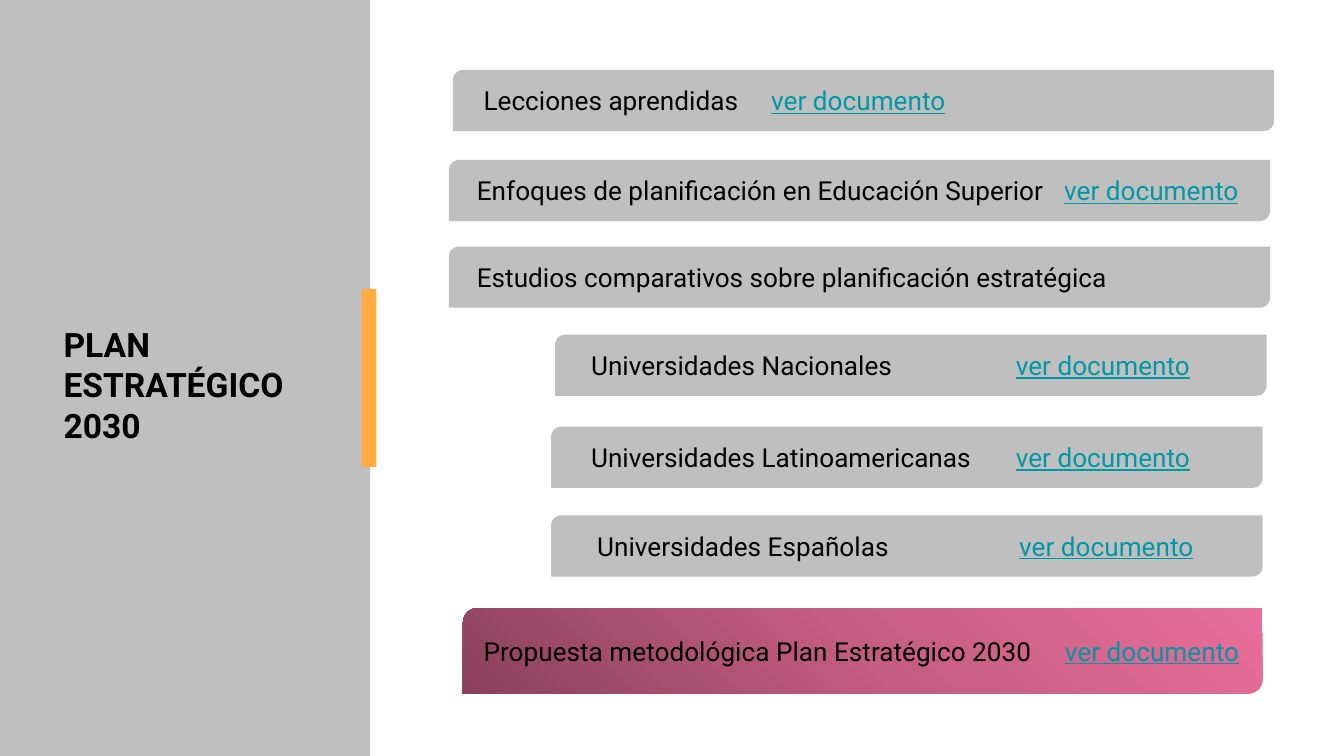
from dataclasses import dataclass

from pptx import Presentation
from pptx import util as u
from pptx.dml.color import RGBColor
from pptx.enum import shapes, text
from pptx.oxml import parse_xml
from pptx.oxml.ns import nsdecls, qn
from pptx.shapes.autoshape import Shape
from pptx.slide import Slide
from pptx.text.text import _Paragraph as Paragraph

PX_PER_INCH = 200
PAGE_WIDTH = 2000
PAGE_HEIGHT = 1125
BAR_HEIGHT = 91
LABEL_HEIGHT = 68
LABEL_DROP = 12
LINK = "ver documento"


@dataclass(frozen=True)
class Theme:
    font: str = "Roboto"
    title_size: int = 18
    label_size: int = 14
    ink: str = "000000"
    link: str = "0097A7"
    panel: str = "BFBFBF"
    accent: str = "FFAB40"
    glow: tuple[tuple[int, str], ...] = ((0, "89415B"), (50, "C45D82"), (100, "E86E9A"))


@dataclass(frozen=True)
class Box:
    left: int
    top: int
    width: int
    height: int


@dataclass(frozen=True)
class Entry:
    label: str
    bar: Box
    label_left: int
    label_width: int
    link_tab: int = 0
    highlighted: bool = False


THEME = Theme()


def main_bar(left: int, top: int) -> Box:
    return Box(left, top, 1222, BAR_HEIGHT)


def sub_bar(left: int, top: int) -> Box:
    return Box(left, top, 1059, BAR_HEIGHT)


ENTRIES = (
    Entry("Lecciones aprendidas", main_bar(674, 104), 700, 1060, 428),
    Entry("Enfoques de planificación en Educación Superior", main_bar(668, 238), 690, 1206, 874),
    Entry("Estudios comparativos sobre planificación estratégica", main_bar(668, 367), 690, 1148),
    Entry("Universidades Nacionales", sub_bar(826, 498), 860, 980, 632),
    Entry("Universidades Latinoamericanas", sub_bar(820, 635), 860, 980, 632),
    Entry("Universidades Españolas", sub_bar(820, 767), 869, 970, 628),
    Entry("Propuesta metodológica Plan Estratégico 2030", Box(689, 905, 1190, 127), 700, 1178, 865, True),
)


def px(length: int) -> u.Emu:
    return u.Emu(length * u.Inches(1) // PX_PER_INCH)


def place(box: Box) -> tuple[u.Emu, ...]:
    return px(box.left), px(box.top), px(box.width), px(box.height)


def add_block(page: Slide, kind: shapes.MSO_SHAPE, box: Box, color: str) -> Shape:
    block = page.shapes.add_shape(kind, *place(box))
    block.shadow.inherit = False
    block.fill.solid()
    block.fill.fore_color.rgb = RGBColor.from_string(color)
    block.line.fill.background()
    return block


def apply_glow(block: Shape) -> None:
    stops = "".join(
        f'<a:gs pos="{percent * 1000}"><a:srgbClr val="{color}"/></a:gs>'
        for percent, color in THEME.glow
    )
    gradient = parse_xml(
        f'<a:gradFill {nsdecls("a")} rotWithShape="1"><a:gsLst>{stops}</a:gsLst>'
        '<a:path path="circle"><a:fillToRect t="100000" r="100000"/></a:path></a:gradFill>'
    )
    properties = block.element.spPr
    properties.replace(properties.find(qn("a:solidFill")), gradient)


def add_para(page: Slide, box: Box, size: int, top_inset: int = 10) -> Paragraph:
    frame = page.shapes.add_textbox(*place(box)).text_frame
    frame.word_wrap = True
    frame.auto_size = text.MSO_AUTO_SIZE.SHAPE_TO_FIT_TEXT
    frame.margin_top = px(top_inset)
    para = frame.paragraphs[0]
    para.font.name = THEME.font
    para.font.size = u.Pt(size)
    return para


def add_span(para: Paragraph, words: str, color: str, underline: bool | None = None) -> None:
    span = para.add_run()
    span.text = words
    span.font.color.rgb = RGBColor.from_string(color)
    span.font.underline = underline


def set_tab(para: Paragraph, position: int) -> None:
    tabs = parse_xml(
        f'<a:tabLst {nsdecls("a")}><a:tab pos="{px(position)}" algn="l"/></a:tabLst>'
    )
    para._p.get_or_add_pPr().insert(0, tabs)


def add_entry(page: Slide, entry: Entry) -> None:
    bar = add_block(page, shapes.MSO_SHAPE.ROUND_2_DIAG_RECTANGLE, entry.bar, THEME.panel)
    drop = LABEL_DROP
    if entry.highlighted:
        apply_glow(bar)
        drop = (entry.bar.height - LABEL_HEIGHT + 1) // 2
    box = Box(entry.label_left, entry.bar.top + drop, entry.label_width, LABEL_HEIGHT)
    para = add_para(page, box, THEME.label_size)
    if entry.link_tab:
        set_tab(para, entry.link_tab)
        add_span(para, entry.label + "\t", THEME.ink)
        add_span(para, LINK, THEME.link, True)
    else:
        add_span(para, entry.label, THEME.ink)


def add_title(page: Slide) -> None:
    add_block(page, shapes.MSO_SHAPE.RECTANGLE, Box(-2, 0, 553, PAGE_HEIGHT), THEME.panel)
    add_block(page, shapes.MSO_SHAPE.RECTANGLE, Box(538, 430, 22, 265), THEME.accent)
    para = add_para(page, Box(75, 412, 432, 262), THEME.title_size, top_inset=70)
    para.font.bold = True
    add_span(para, "PLAN ESTRATÉGICO 2030", THEME.ink)


def main() -> None:
    deck = Presentation()
    deck.slide_width, deck.slide_height = px(PAGE_WIDTH), px(PAGE_HEIGHT)
    page = deck.slides.add_slide(deck.slide_layouts[6])
    add_title(page)
    for entry in ENTRIES:
        add_entry(page, entry)
    deck.save("out.pptx")


if __name__ == "__main__":
    main()
